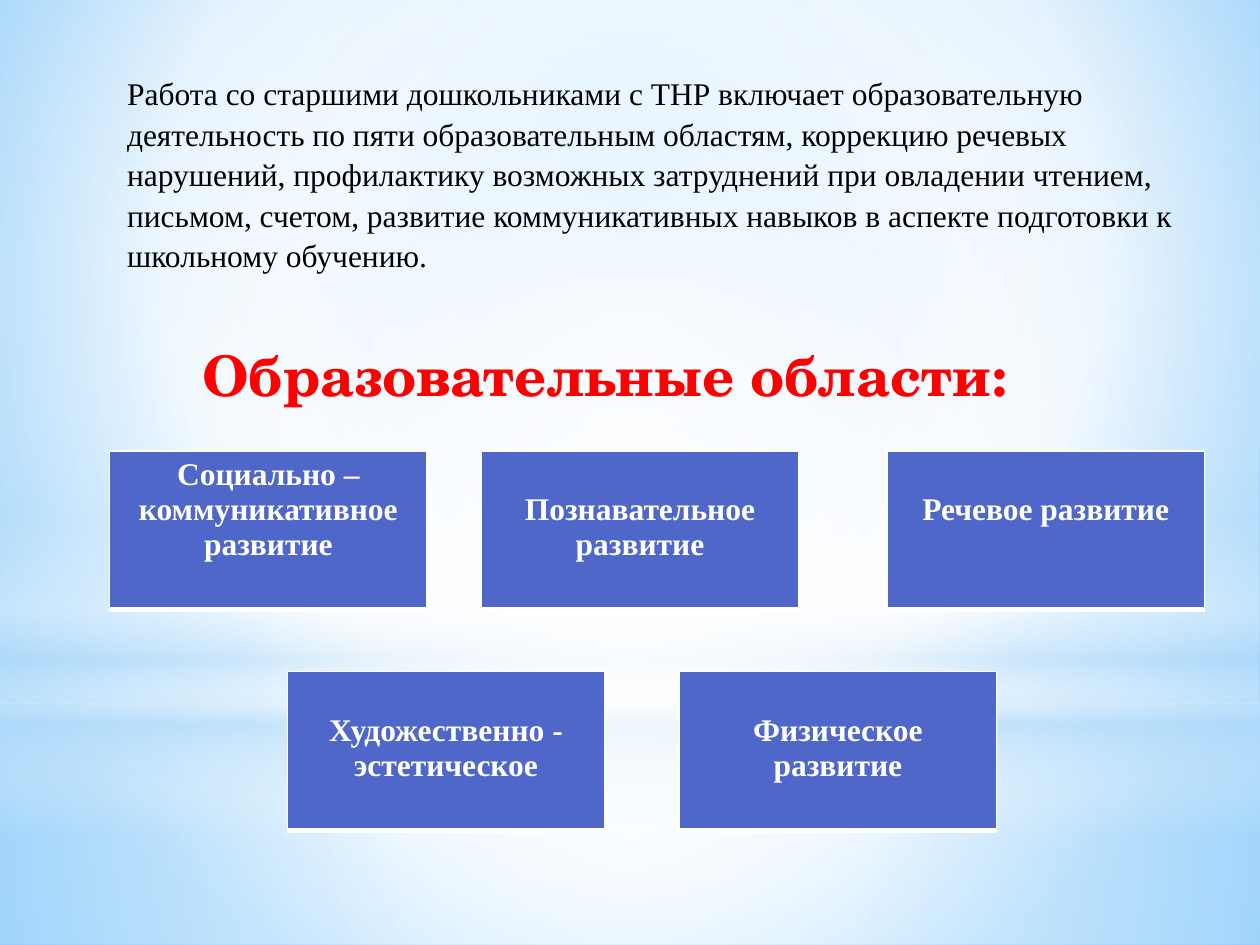
from dataclasses import dataclass
from lxml import etree
from pptx import Presentation, util as u
from pptx.dml.color import RGBColor
from pptx.enum import shapes, text
from pptx.oxml.ns import qn


@dataclass(frozen=True)
class Theme:
    body_font: str = "Times New Roman"
    heading_font: str = "TeX Gyre Schola"
    body_size: float = 18
    heading_size: float = 32
    ink: str = "000000"
    accent: str = "FF0000"
    card: str = "4E67C8"
    white: str = "FFFFFF"
    haze: str = "B4DCFA"
    sky: str = "9ED5FF"
    deep_sky: str = "5BB9FF"


THEME = Theme()
WIDTH, HEIGHT = 10, 7.5

INTRO = (
    "Работа со старшими дошкольниками с ТНР включает образовательную деятельность "
    "по пяти образовательным областям, коррекцию речевых нарушений, профилактику "
    "возможных затруднений при овладении чтением, письмом, счетом, развитие "
    "коммуникативных навыков в аспекте подготовки к школьному обучению."
)
HEADING = "Образовательные области:"
CARD_WIDTH, CARD_HEIGHT = 2.52, 1.26
CARD_ROWS = [
    (3.58, [
        (0.87, 0, "Социально – коммуникативное\nразвитие"),
        (3.82, 1, "Познавательное развитие"),
        (7.04, 1, "Речевое развитие"),
    ]),
    (5.33, [
        (2.28, 1, "Художественно - эстетическое"),
        (5.39, 1, "Физическое развитие"),
    ]),
]
CELL_INSET, LINE_HEIGHT = 0.05, 0.28
BORDERS = [("lnL", 1), ("lnR", 1), ("lnT", 1), ("lnB", 3)]

SKY_STOPS = [(0, THEME.sky, 100), (60, THEME.white, 100), (100, THEME.deep_sky, 100)]
SKY_FOCUS = (20, 10, 20, 60)
CENTRE = (50, 50, 50, 50)
RECT, OVAL = shapes.MSO_SHAPE.RECTANGLE, shapes.MSO_SHAPE.OVAL
GLOWS = [
    (RECT, 5.58, 1.92, CENTRE,
     [(0, THEME.white, 91), (37, THEME.white, 76), (100, THEME.haze, 79)]),
    (RECT, 0, 5.58, CENTRE,
     [(0, THEME.white, 89), (48, THEME.white, 62), (100, THEME.haze, 79)]),
    (RECT, 4.12, 2.5, None,
     [(0, THEME.white, 0), (29, THEME.white, 30), (45, THEME.haze, 40),
      (55, THEME.white, 26), (65, THEME.haze, 60), (100, THEME.white, 0)]),
    (OVAL, 1.75, 5.58, CENTRE, [(0, THEME.white, 100), (56, THEME.white, 0)]),
]


def inches(*lengths):
    return [u.Inches(length) for length in lengths]


def add_node(parent, tag, **attributes):
    values = {name: str(value) for name, value in attributes.items()}
    return etree.SubElement(parent, qn(f"a:{tag}"), values)


def paint_gradient(fill, owner, stops, focus):
    fill.gradient()
    gradient = next(owner.iter(qn("a:gradFill")))
    gradient.clear()
    gradient.set("rotWithShape", "1")
    stop_list = add_node(gradient, "gsLst")
    for position, color, opacity in stops:
        stop = add_node(stop_list, "gs", pos=position * 1000)
        add_node(add_node(stop, "srgbClr", val=color), "alpha", val=opacity * 1000)
    if focus:
        radial = add_node(gradient, "path", path="circle")
        edges = {edge: share * 1000 for edge, share in zip("ltrb", focus)}
        add_node(radial, "fillToRect", **edges)
    else:
        add_node(gradient, "lin", ang=90 * 60000, scaled=0)


def write(frame, words, font, size, color, bold=False, align=None, spacing=None):
    frame.word_wrap = True
    frame.text = words
    for paragraph in frame.paragraphs:
        paragraph.alignment = align
        paragraph.line_spacing = spacing
        for run in paragraph.runs:
            run.font.name = font
            run.font.size = u.Pt(size)
            run.font.bold = bold
            run.font.color.rgb = RGBColor.from_string(color)


def add_glow(slide, kind, top, height, focus, stops):
    glow = slide.shapes.add_shape(kind, *inches(0, top, WIDTH, height))
    glow.shadow.inherit = False
    glow.line.fill.background()
    paint_gradient(glow.fill, glow.element.spPr, stops, focus)


def add_card(slide, left, top, lines_down, words):
    card = slide.shapes.add_table(1, 1, *inches(left, top, CARD_WIDTH, CARD_HEIGHT))
    cell = card.table.cell(0, 0)
    cell.margin_top = u.Inches(CELL_INSET + lines_down * LINE_HEIGHT)
    write(cell.text_frame, words, THEME.body_font, THEME.body_size, THEME.white,
          bold=True, align=text.PP_ALIGN.CENTER)
    properties = cell._tc.get_or_add_tcPr()
    for side, weight in BORDERS:
        border = add_node(properties, side, w=u.Pt(weight))
        add_node(add_node(border, "solidFill"), "srgbClr", val=THEME.white)
    cell.fill.solid()
    cell.fill.fore_color.rgb = RGBColor.from_string(THEME.card)


def main():
    deck = Presentation()
    deck.slide_width, deck.slide_height = inches(WIDTH, HEIGHT)
    slide = deck.slides.add_slide(deck.slide_layouts[6])
    paint_gradient(slide.background.fill, slide.element, SKY_STOPS, SKY_FOCUS)
    for glow in GLOWS:
        add_glow(slide, *glow)

    intro = slide.shapes.add_textbox(*inches(0.91, 0.52, 8.58, 1.62))
    write(intro.text_frame, INTRO, THEME.body_font, THEME.body_size, THEME.ink,
          spacing=1.07)
    heading = slide.shapes.add_textbox(*inches(1.3, 2.65, 7, 0.64))
    write(heading.text_frame, HEADING, THEME.heading_font, THEME.heading_size,
          THEME.accent, bold=True, align=text.PP_ALIGN.CENTER)

    for top, cards in CARD_ROWS:
        for left, lines_down, words in cards:
            add_card(slide, left, top, lines_down, words)
    deck.save("out.pptx")


if __name__ == "__main__":
    main()
